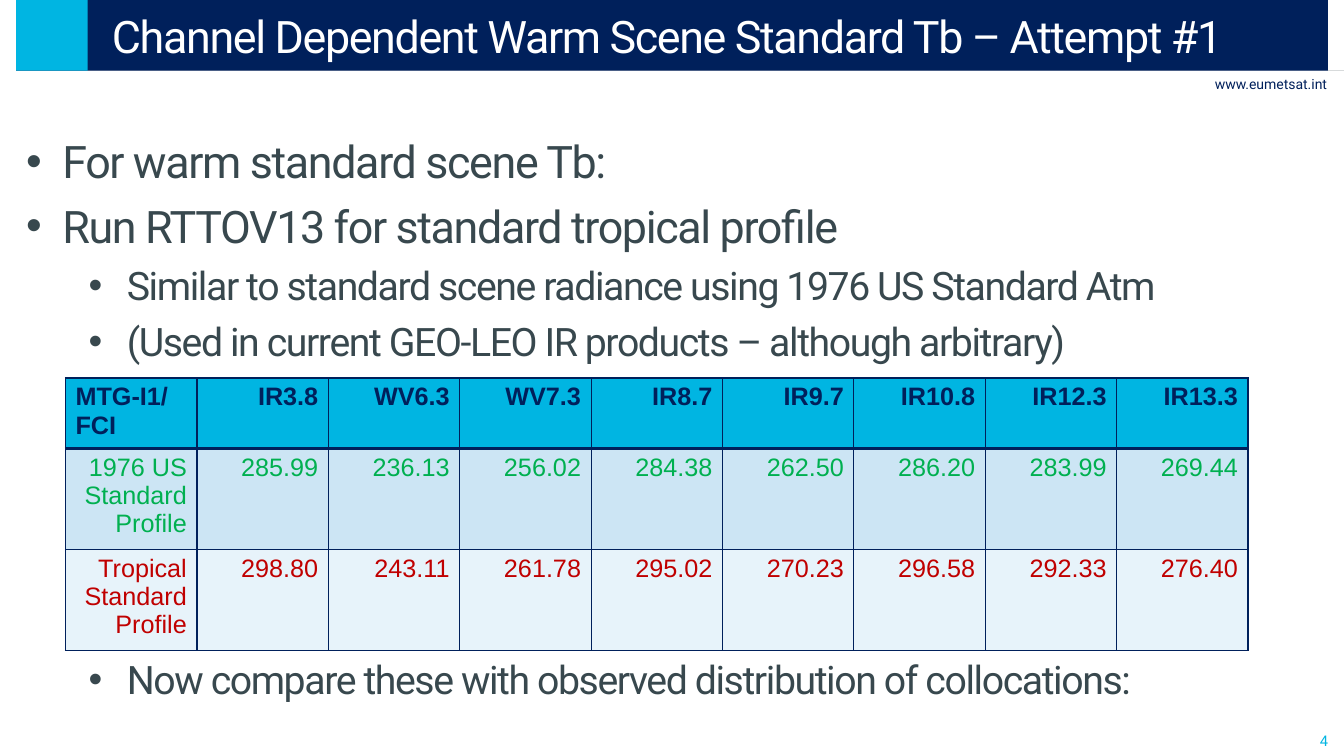
from lxml.etree import SubElement
from pptx import Presentation
from pptx.dml.color import RGBColor
from pptx.enum.shapes import MSO_CONNECTOR as CONNECTOR, MSO_SHAPE as SHAPE
from pptx.enum.text import MSO_ANCHOR as ANCHOR, PP_ALIGN as ALIGN
from pptx.oxml.ns import qn
from pptx.util import Inches, Pt

NAVY, CYAN, SLATE, WHITE = "00205B", "00B5E2", "38484E", "FFFFFF"
GREEN, RED = "00B050", "C00000"

# text, level, space before in points
BULLETS = [
    ("For warm standard scene Tb:", 0, 0),
    ("Run RTTOV13 for standard tropical profile", 0, 7.5),
    ("Similar to standard scene radiance using 1976 US Standard Atm", 1, 6.5),
    ("(Used in current GEO-LEO IR products – although arbitrary)", 1, 6.5),
    ("Now compare these with observed distribution of collocations:", 1, 208),
]
BULLET_LEVELS = [(32, 0.36, 0.36), (28, 1, 0.38)]  # size, indent, hanging

# cells, fill, text colour, height, top border, bottom border
TABLE_ROWS = [
    (["MTG-I1/FCI", "IR3.8", "WV6.3", "WV7.3", "IR8.7", "IR9.7", "IR10.8",
      "IR12.3", "IR13.3"], CYAN, NAVY, 0.66, 1, 3),
    (["1976 US Standard Profile", "285.99", "236.13", "256.02", "284.38",
      "262.50", "286.20", "283.99", "269.44"], "CCE5F4", GREEN, 0.94, 3, 1),
    (["Tropical Standard Profile", "298.80", "243.11", "261.78", "295.02",
      "270.23", "296.58", "292.33", "276.40"], "E7F3FA", RED, 0.94, 1, 1),
]


def color(hex_string):
    return RGBColor.from_string(hex_string)


class SlideBuilder:
    def __init__(self, presentation, font="Roboto"):
        self.slide = presentation.slides.add_slide(presentation.slide_layouts[5])
        self.shapes = self.slide.shapes
        self.font = font

    def style(self, paragraph, size, hex_string, font=None, bold=False, spacing=0):
        for run in paragraph.runs:
            run.font.name = font or self.font
            run.font.size = Pt(size)
            run.font.bold = bold
            run.font.color.rgb = color(hex_string)
            if spacing:
                run.font._element.set("spc", str(spacing))

    def line(self, x1, y1, x2, y2, hex_string, width, alpha):
        """Draw a line; alpha is its opacity in percent."""
        connector = self.shapes.add_connector(
            CONNECTOR.STRAIGHT, Inches(x1), Inches(y1), Inches(x2), Inches(y2))
        connector.line.width = Pt(width)
        connector.line.color.rgb = color(hex_string)
        properties = connector._element.spPr
        paint = next(properties.iter(qn("a:srgbClr")))
        SubElement(paint, qn("a:alpha"), val=str(alpha * 1000))
        SubElement(properties, qn("a:effectLst"))

    def rectangle(self, left, top, width, height, fill):
        shape = self.shapes.add_shape(
            SHAPE.RECTANGLE, Inches(left), Inches(top), Inches(width), Inches(height))
        shape.shadow.inherit = False
        shape.fill.solid()
        shape.fill.fore_color.rgb = color(fill)
        shape.line.fill.background()

    def text_box(self, left, top, width, height, wrap=True):
        box = self.shapes.add_textbox(
            Inches(left), Inches(top), Inches(width), Inches(height))
        box.text_frame.word_wrap = wrap
        return box.text_frame

    def label(self, left, top, width, height, text, size, hex_string, wrap=True):
        frame = self.text_box(left, top, width, height, wrap)
        frame.text = text
        frame.paragraphs[0].alignment = ALIGN.RIGHT
        self.style(frame.paragraphs[0], size, hex_string)

    def title(self, left, top, width, height, text):
        title = self.shapes.title
        self.shapes._spTree.append(title._element)  # in front of the header band
        title.left, title.top = Inches(left), Inches(top)
        title.width, title.height = Inches(width), Inches(height)
        frame = title.text_frame
        frame.text = text
        frame.vertical_anchor = ANCHOR.MIDDLE
        frame.margin_left = 0
        frame.margin_top = frame.margin_right = frame.margin_bottom = Inches(0.04)
        paragraph = frame.paragraphs[0]
        paragraph.alignment = ALIGN.LEFT
        paragraph._p.get_or_add_pPr().set("marL", str(Inches(0.24)))
        self.style(paragraph, 32, WHITE, spacing=-100)

    def bullets(self, left, top, width, height, items):
        frame = self.text_box(left, top, width, height)
        for index, (text, level, space) in enumerate(items):
            paragraph = frame.add_paragraph() if index else frame.paragraphs[0]
            paragraph.text = text
            paragraph.level = level
            paragraph.space_before = Pt(space)
            size, indent, hanging = BULLET_LEVELS[level]
            properties = paragraph._p.get_or_add_pPr()
            properties.set("marL", str(Inches(indent)))
            properties.set("indent", str(-Inches(hanging)))
            SubElement(properties, qn("a:buFont"), typeface="Arial")
            SubElement(properties, qn("a:buChar"), char="•")
            self.style(paragraph, size, SLATE, spacing=-100)

    def borders(self, cell, top, bottom):
        properties = cell._tc.get_or_add_tcPr()
        for side, width in zip("LRTB", (1, 1, top, bottom)):
            border = SubElement(properties, qn(f"a:ln{side}"), w=str(Pt(width)))
            fill = SubElement(border, qn("a:solidFill"))
            SubElement(fill, qn("a:srgbClr"), val=NAVY)

    def table(self, left, top, width, rows):
        column_count = len(rows[0][0])
        height = sum(row[3] for row in rows)
        table = self.shapes.add_table(
            len(rows), column_count, Inches(left), Inches(top),
            Inches(width), Inches(height)).table
        table.horz_banding = False
        for column in table.columns:
            column.width = Inches(width / column_count)
        for row_index, (texts, fill, ink, row_height, above, below) in enumerate(rows):
            table.rows[row_index].height = Inches(row_height)
            for column_index, text in enumerate(texts):
                cell = table.cell(row_index, column_index)
                cell.text = text
                self.borders(cell, above, below)
                cell.fill.solid()
                cell.fill.fore_color.rgb = color(fill)
                paragraph = cell.text_frame.paragraphs[0]
                is_corner = row_index == column_index == 0
                paragraph.alignment = ALIGN.LEFT if is_corner else ALIGN.RIGHT
                self.style(paragraph, 18, ink, "Arial", bold=row_index == 0)


def main():
    presentation = Presentation()
    presentation.slide_width = Inches(13.33)
    presentation.slide_height = Inches(7.5)
    builder = SlideBuilder(presentation)
    builder.line(0.16, 0.7, 13.33, 0.7, SLATE, 0.5, alpha=20)
    builder.label(11.92, 0.7, 1.34, 0.27, "www.eumetsat.int", 10, NAVY, wrap=False)
    builder.label(12.6, 7.21, 0.67, 0.29, "4", 10.5, CYAN)
    builder.rectangle(0.16, -0.01, 13.01, 0.71, NAVY)
    builder.rectangle(0.16, -0.01, 0.71, 0.71, CYAN)
    builder.title(0.87, 0, 12.47, 0.7,
                  "Channel Dependent Warm Scene Standard Tb – Attempt #1")
    builder.bullets(0.16, 1.28, 12.72, 5.73, BULLETS)
    builder.table(0.65, 3.75, 11.73, TABLE_ROWS)
    presentation.save("out.pptx")


if __name__ == "__main__":
    main()
